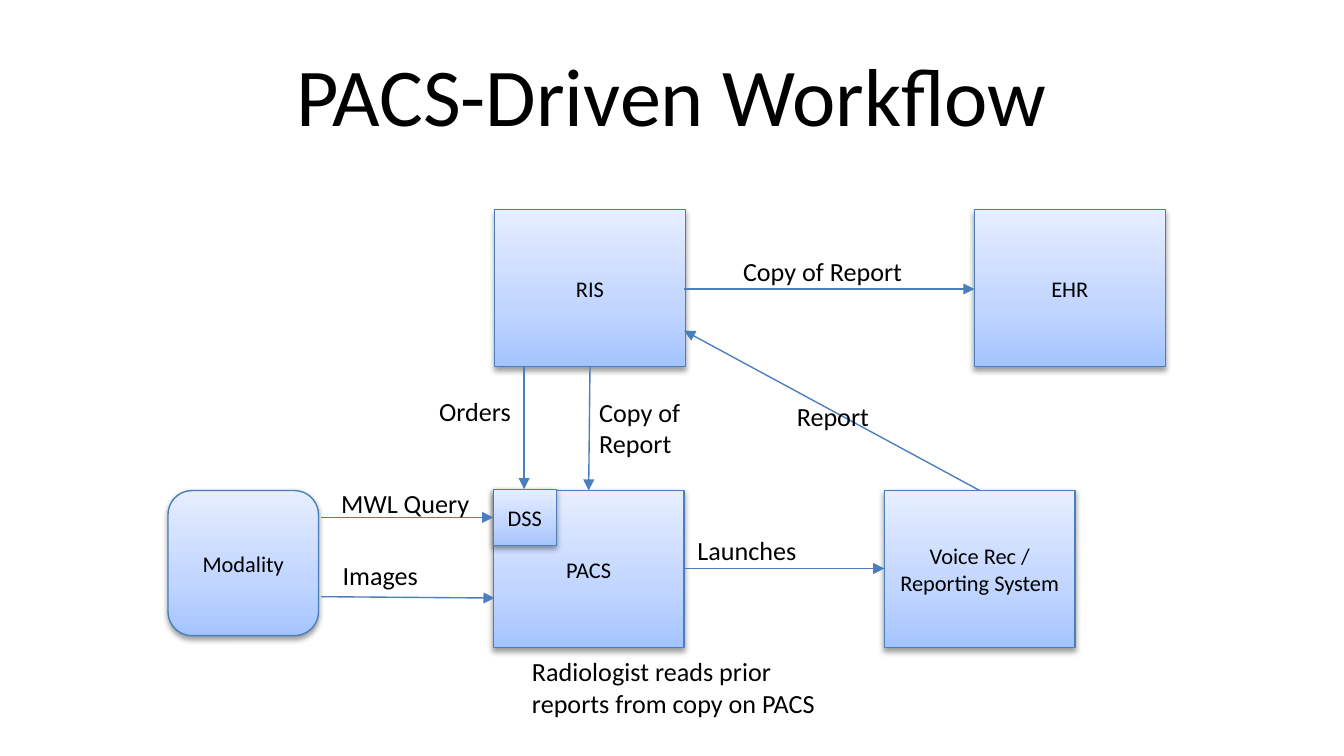
from copy import deepcopy

from lxml import etree
from pptx import Presentation
from pptx.dml.color import RGBColor
from pptx.enum import shapes, text
from pptx.oxml import ns
from pptx.util import Inches, Pt

FONT = "Calibri"
BLACK = RGBColor(0x00, 0x00, 0x00)
LINE = RGBColor(0x4B, 0x7E, 0xBC)
GRADIENT = (
    (0, RGBColor(0xA4, 0xC4, 0xFF)),
    (0.35, RGBColor(0xBF, 0xD4, 0xFF)),
    (1, RGBColor(0xE6, 0xEE, 0xFF)),
)

RECT = shapes.MSO_SHAPE.RECTANGLE
ROUNDED = shapes.MSO_SHAPE.ROUNDED_RECTANGLE
LEFT, CENTER, RIGHT = text.PP_ALIGN.LEFT, text.PP_ALIGN.CENTER, text.PP_ALIGN.RIGHT
TOP, MIDDLE = text.MSO_ANCHOR.TOP, text.MSO_ANCHOR.MIDDLE

SYSTEM_W, SYSTEM_H = 1.42, 1.17
UPPER_Y, LOWER_Y = 1.56, 3.65

# name, shape, left, top, width, height
BOXES = (
    ("RIS", RECT, 3.68, UPPER_Y, SYSTEM_W, SYSTEM_H),
    ("EHR", RECT, 7.25, UPPER_Y, SYSTEM_W, SYSTEM_H),
    ("PACS", RECT, 3.67, LOWER_Y, SYSTEM_W, SYSTEM_H),
    ("Voice Rec / Reporting System", RECT, 6.58, LOWER_Y, SYSTEM_W, SYSTEM_H),
    ("Modality", ROUNDED, 1.25, LOWER_Y, 1.12, 1.08),
    ("DSS", RECT, 3.67, 3.64, 0.47, 0.42),
)

# start x, start y, end x, end y
ARROWS = (
    (5.08, 4.23, 6.58, 4.23),  # PACS to reporting
    (2.39, 4.44, 3.68, 4.45),  # Modality to PACS
    (7.29, 3.65, 5.09, 2.46),  # reporting to RIS
    (5.09, 2.15, 7.25, 2.15),  # RIS to EHR
    (3.9, 2.72, 3.9, 3.64),    # RIS to DSS
    (2.39, 3.85, 3.67, 3.85),  # Modality to DSS
    (4.39, 2.73, 4.38, 3.65),  # RIS to PACS
)

# paragraphs, left, top, width, height, alignment
LABELS = (
    (["Launches"], 5.09, 3.93, 1.58, 0.34, LEFT),
    (["Orders"], 2.41, 2.89, 1.49, 0.34, RIGHT),
    (["Images"], 2.45, 4.11, 1.58, 0.34, LEFT),
    (["Copy of Report"], 5.43, 1.85, 1.58, 0.34, LEFT),
    (["Report"], 5.83, 2.93, 1.58, 0.34, LEFT),
    (["MWL Query"], 2.44, 3.58, 1.58, 0.34, LEFT),
    (["Copy of", "Report"], 4.36, 2.9, 1.22, 0.57, LEFT),
    (["Radiologist reads prior reports from copy on PACS"],
     3.86, 4.83, 2.48, 0.57, LEFT),
)


def write(sp, paragraphs, size, align, anchor):
    tf = sp.text_frame
    tf.word_wrap = True
    tf.vertical_anchor = anchor
    for i, content in enumerate(paragraphs):
        p = tf.add_paragraph() if i else tf.paragraphs[0]
        p.alignment = align
        r = p.add_run()
        r.text = content
        r.font.name = FONT
        r.font.size = Pt(size)
        r.font.color.rgb = BLACK


def add_text(slide, paragraphs, x, y, w, h, align, size=14, anchor=TOP):
    sp = slide.shapes.add_textbox(Inches(x), Inches(y), Inches(w), Inches(h))
    write(sp, paragraphs, size, align, anchor)


def fill_gradient(sp):
    """Fill from the bottom edge upwards with the three gradient stops."""
    sp.fill.gradient()
    sp.fill.gradient_angle = 90
    stops = sp._element.spPr.find(".//" + ns.qn("a:gsLst"))
    stops.insert(1, deepcopy(stops[0]))
    for stop, (position, color) in zip(sp.fill.gradient_stops, GRADIENT):
        stop.position = position
        stop.color.rgb = color


def add_shadow(sp):
    sp.shadow.inherit = False
    effects = sp._element.spPr.find(ns.qn("a:effectLst"))
    shadow = etree.SubElement(
        effects, ns.qn("a:outerShdw"), blurRad=str(Pt(3.1)),
        dist=str(Pt(1.6)), dir="5400000", rotWithShape="0")
    color = etree.SubElement(shadow, ns.qn("a:srgbClr"), val=str(BLACK))
    etree.SubElement(color, ns.qn("a:alpha"), val="38000")


def add_box(slide, name, kind, x, y, w, h):
    sp = slide.shapes.add_shape(kind, Inches(x), Inches(y), Inches(w), Inches(h))
    fill_gradient(sp)
    sp.line.color.rgb = LINE
    sp.line.width = Pt(0.75)
    add_shadow(sp)
    write(sp, [name], 12, CENTER, MIDDLE)


def add_arrow(slide, x1, y1, x2, y2):
    arrow = slide.shapes.add_connector(
        shapes.MSO_CONNECTOR.STRAIGHT,
        Inches(x1), Inches(y1), Inches(x2), Inches(y2))
    arrow.line.color.rgb = LINE
    arrow.line.width = Pt(0.75)
    etree.SubElement(arrow.line._get_or_add_ln(), ns.qn("a:tailEnd"),
                     type="triangle")
    etree.SubElement(arrow._element.spPr, ns.qn("a:effectLst"))


def main():
    prs = Presentation()
    prs.slide_width = Inches(10)
    prs.slide_height = prs.slide_width * 9 // 16
    slide = prs.slides.add_slide(prs.slide_layouts[6])

    add_text(slide, ["PACS-Driven Workflow"], 0.5, 0.23, 9, 0.94, CENTER,
             size=44, anchor=MIDDLE)
    for box in BOXES:
        add_box(slide, *box)
    for arrow in ARROWS:
        add_arrow(slide, *arrow)
    for label in LABELS:
        add_text(slide, *label)

    prs.save("out.pptx")


if __name__ == "__main__":
    main()
